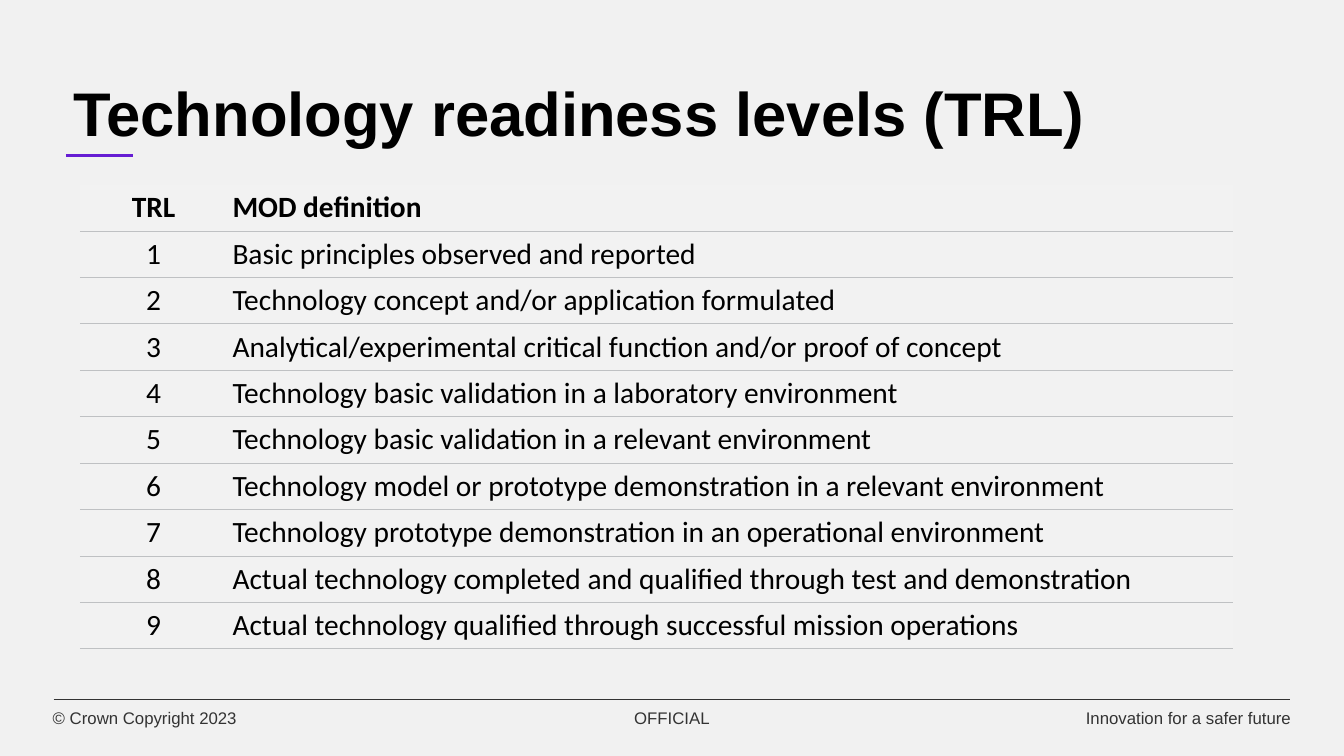
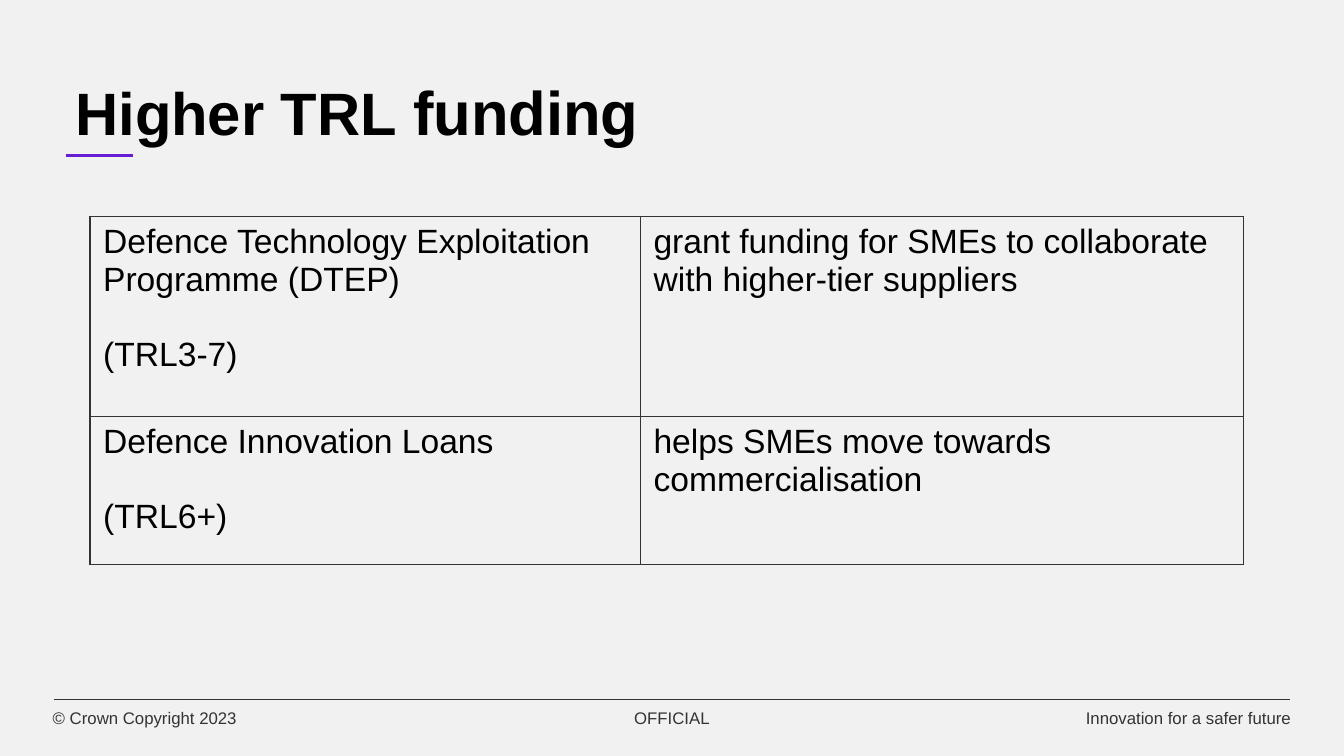
from dataclasses import dataclass

from lxml import etree
from pptx import Presentation
from pptx.dml.color import RGBColor
from pptx.enum import shapes, text
from pptx.oxml import ns
from pptx.util import Cm, Pt

# Content
FOOTERS = [  # wording, left, width, alignment
    ("© Crown Copyright 2023", 1.08, 7.62, text.PP_ALIGN.LEFT),
    ("OFFICIAL", 12.63, 8.61, text.PP_ALIGN.CENTER),
    ("Innovation for a safer future", 24.18, 8.61, text.PP_ALIGN.RIGHT),
]
LEVELS_TITLE = [("Technology readiness levels (TRL)", 44)]
LEVELS_HEADER = ("TRL", "MOD definition")
LEVELS = [
    "Basic principles observed and reported",
    "Technology concept and/or application formulated",
    "Analytical/experimental critical function and/or proof of concept",
    "Technology basic validation in a laboratory environment",
    "Technology basic validation in a relevant environment",
    "Technology model or prototype demonstration in a relevant environment",
    "Technology prototype demonstration in an operational environment",
    "Actual technology completed and qualified through test and demonstration",
    "Actual technology qualified through successful mission operations",
]
FUNDING_TITLE = [("Higher TRL ", 42.7), ("funding", 44)]
FUNDING = [
    ("Defence Technology Exploitation Programme (DTEP)\n(TRL3-7)",
     "grant funding for SMEs to collaborate with higher-tier suppliers"),
    ("Defence Innovation Loans\n(TRL6+)",
     "helps SMEs move towards commercialisation"),
]


@dataclass(frozen=True)
class Theme:
    page: str = "F1F1F1"
    accent: str = "661DD3"
    ink: str = "000000"
    muted: str = "333333"
    row_fill: str = "F2F2F2"
    row_rule: str = "BFC1C3"
    font: str = "Arial"
    levels_font: str = "Calibri"
    footer_size: float = 12
    levels_size: float = 21
    funding_size: float = 24
    funding_gap: float = 26.8


THEME = Theme()
PAGE_WIDTH, PAGE_HEIGHT = Cm(33.87), Cm(19.05)
NO_GRID_STYLE = "{2D5ABB26-0587-4C30-8999-92F81FD0307C}"


def rgb(value):
    return RGBColor.from_string(value)


def style_font(font, name, size, color, bold=False):
    font.name, font.size, font.bold = name, Pt(size), bold
    font.color.rgb = rgb(color)


# Parts shared by the slides
def add_page(slide):
    page = slide.shapes.add_shape(
        shapes.MSO_SHAPE.RECTANGLE, 0, 0, PAGE_WIDTH, PAGE_HEIGHT)
    page.shadow.inherit = False
    page.fill.solid()
    page.fill.fore_color.rgb = rgb(THEME.page)
    page.line.fill.background()


def add_rule(slide, left, right, top, color, width):
    rule = slide.shapes.add_connector(
        shapes.MSO_CONNECTOR.STRAIGHT, Cm(left), Cm(top), Cm(right), Cm(top))
    rule.line.color.rgb = rgb(color)
    rule.line.width = Pt(width)
    etree.SubElement(rule._element.spPr, ns.qn("a:effectLst"))


def add_text_frame(slide, left, top, width, height, anchor):
    frame = slide.shapes.add_textbox(
        Cm(left), Cm(top), Cm(width), Cm(height)).text_frame
    frame.word_wrap = True
    frame.vertical_anchor = anchor
    return frame


def add_slide(prs):
    slide = prs.slides.add_slide(prs.slide_layouts[6])
    add_page(slide)
    add_rule(slide, 1.66, 3.35, 3.91, THEME.accent, 2.25)
    add_rule(slide, 1.35, 32.51, 17.63, THEME.muted, 0.5)
    for wording, left, width, align in FOOTERS:
        footer = add_text_frame(slide, left, 17.63, width, 0.97,
                                text.MSO_ANCHOR.MIDDLE).paragraphs[0]
        footer.text, footer.alignment, footer.line_spacing = wording, align, 0.9
        style_font(footer.font, THEME.font, THEME.footer_size, THEME.muted)
    return slide


def add_title(slide, parts, box, anchor, spacing):
    title = add_text_frame(slide, *box, anchor).paragraphs[0]
    title.line_spacing = spacing
    style_font(title.font, THEME.font, parts[-1][1], THEME.ink, True)
    for wording, size in parts:
        run = title.add_run()
        run.text = wording
        if size != parts[-1][1]:
            run.font.size = Pt(size)


# Tables
def add_plain_table(slide, rows, left, top, widths, heights):
    table = slide.shapes.add_table(
        len(rows), len(widths), Cm(left), Cm(top),
        Cm(sum(widths)), Cm(sum(heights))).table
    table.first_row = table.horz_banding = False
    table._tbl.tblPr.find(ns.qn("a:tableStyleId")).text = NO_GRID_STYLE
    for column, width in zip(table.columns, widths):
        column.width = Cm(width)
    for row, height, wordings in zip(table.rows, heights, rows):
        row.height = Cm(height)
        for cell, wording in zip(row.cells, wordings):
            cell.text = wording
    return table


def set_margins(cell, side, end):
    cell.margin_left = cell.margin_right = Cm(side)
    cell.margin_top = cell.margin_bottom = Cm(end)


def set_borders(cell, sides, color, width):
    properties = cell._tc.get_or_add_tcPr()
    for position, side in enumerate(sides):
        line = etree.Element(ns.qn(f"a:ln{side}"), w=str(Pt(width)))
        fill = etree.SubElement(line, ns.qn("a:solidFill"))
        etree.SubElement(fill, ns.qn("a:srgbClr"), val=color)
        properties.insert(position, line)


# Slides
def build_levels(prs):
    slide = add_slide(prs)
    add_title(slide, LEVELS_TITLE, (1.6, 1.85, 27.28, 2.06),
              text.MSO_ANCHOR.BOTTOM, 0.9)
    rows = [LEVELS_HEADER] + [(str(n), level)
                              for n, level in enumerate(LEVELS, 1)]
    table = add_plain_table(slide, rows, 2.01, 4.65, (3.72, 25.34),
                            [1.17] * len(rows))
    for row_index, row in enumerate(table.rows):
        for column_index, cell in enumerate(row.cells):
            cell.fill.solid()
            cell.fill.fore_color.rgb = rgb(THEME.row_fill)
            set_margins(cell, 0.13, 0.13)
            set_borders(cell, "B", THEME.row_rule, 0.75)
            entry = cell.text_frame.paragraphs[0]
            style_font(entry.font, THEME.levels_font, THEME.levels_size,
                       THEME.ink, row_index == 0)
            if column_index == 0:
                entry.alignment = text.PP_ALIGN.CENTER


def build_funding(prs):
    slide = add_slide(prs)
    add_title(slide, FUNDING_TITLE, (1.65, 1.75, 27.2, 2.21),
              text.MSO_ANCHOR.TOP, 1.0)
    table = add_plain_table(slide, FUNDING, 2.27, 5.45, (13.87, 15.2),
                            (5.04, 3.73))
    for cell in table.iter_cells():
        cell.fill.background()
        set_margins(cell, 0.33, 0.18)
        set_borders(cell, "LRTB", THEME.muted, 1)
        for index, entry in enumerate(cell.text_frame.paragraphs):
            style_font(entry.font, THEME.font, THEME.funding_size, THEME.ink)
            if index:
                entry.space_before = Pt(THEME.funding_gap)


def main():
    prs = Presentation()
    prs.slide_width, prs.slide_height = PAGE_WIDTH, PAGE_HEIGHT
    build_levels(prs)
    build_funding(prs)
    prs.save("out.pptx")


if __name__ == "__main__":
    main()
